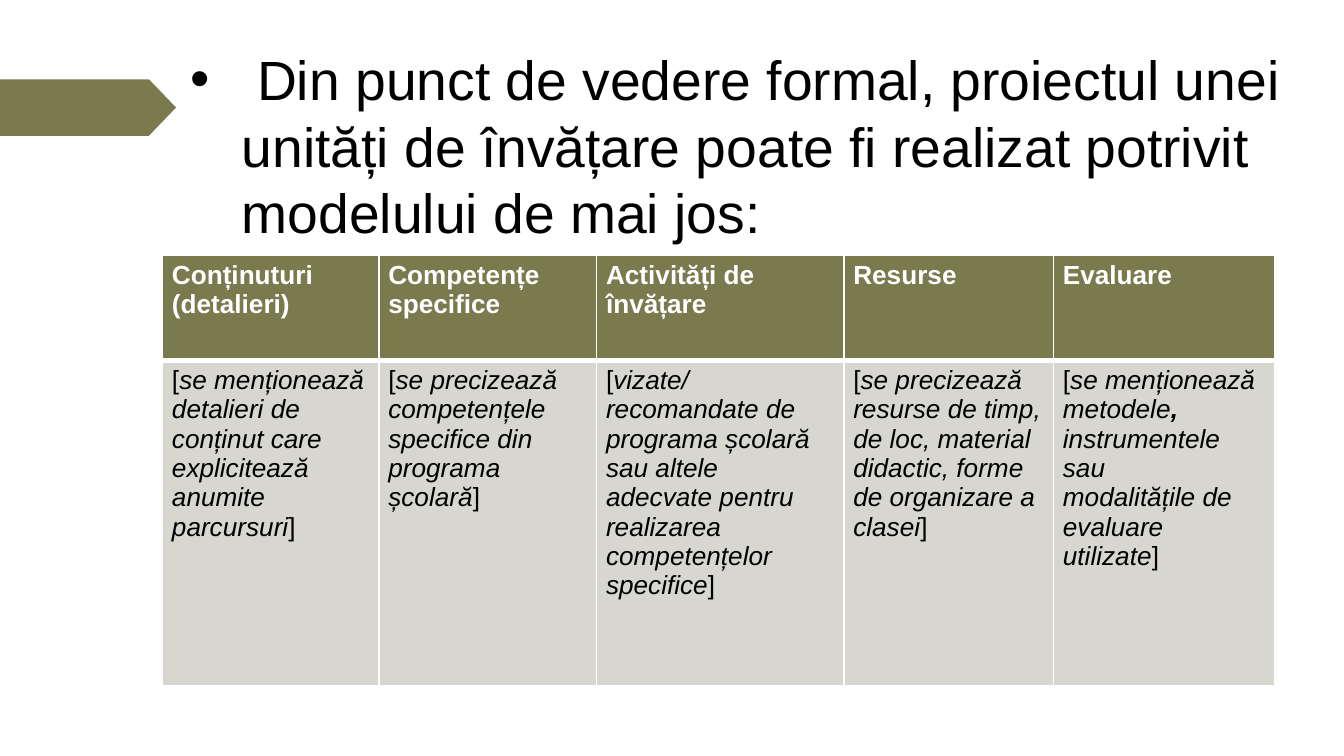
from lxml.etree import SubElement
from pptx import Presentation
from pptx.dml.color import RGBColor
from pptx.enum.shapes import MSO_SHAPE
from pptx.oxml.ns import qn
from pptx.util import Inches, Pt

FONT = "Arial"
OLIVE, PALE, WHITE, BLACK = "797B4F", "D7D7D0", "FFFFFF", "000000"
TITLE = ("Din punct de vedere formal, proiectul unei unități de învățare "
         "poate fi realizat potrivit modelului de mai jos:")
COLUMN_WIDTHS = [1.61, 1.62, 1.84, 1.56, 1.65]
ROW_HEIGHTS = [0.78, 2.42]
HEADERS = [
    ["Conținuturi", "(detalieri)"],
    ["Competențe specifice"],
    ["Activități de învățare"],
    ["Resurse"],
    ["Evaluare"],
]
DETAILS = [
    ["se menționează detalieri de conținut care explicitează anumite parcursuri"],
    ["se precizează", "competențele", "specifice din", "programa", "școlară"],
    ["vizate/", "recomandate de", "programa școlară", "sau altele",
     "adecvate pentru", "realizarea", "competențelor", "specifice"],
    ["se precizează resurse de timp, de loc, material didactic, "
     "forme de organizare a clasei"],
    ["se menționează metodele*,*", "instrumentele", "sau",
     "modalitățile de", "evaluare", "utilizate"],
]


def color(value):
    """Return the colour for a hex string."""
    return RGBColor.from_string(value)


def add_run(paragraph, text, size, fill, bold=False, italic=False):
    """Append one formatted run to a paragraph."""
    run = paragraph.add_run()
    run.text = text
    font = run.font
    font.name, font.size, font.bold, font.italic = FONT, Pt(size), bold, italic
    font.color.rgb = color(fill)


def add_arrow(slide, left, top, width, height):
    """Place the olive marker that points at the title."""
    arrow = slide.shapes.add_shape(
        MSO_SHAPE.PENTAGON, Inches(left), Inches(top), Inches(width), Inches(height))
    arrow.adjustments[0] = 0.48
    arrow.shadow.inherit = False
    arrow.fill.solid()
    arrow.fill.fore_color.rgb = color(OLIVE)
    arrow.line.fill.background()


def add_title(slide, left, top, width, height):
    """Place the bulleted introduction with a hanging indent."""
    frame = slide.shapes.add_textbox(
        Inches(left), Inches(top), Inches(width), Inches(height)).text_frame
    frame.word_wrap = True
    paragraph = frame.paragraphs[0]
    properties = paragraph._p.get_or_add_pPr()
    properties.set("marL", str(Inches(0.38)))
    properties.set("indent", str(-Inches(0.38)))
    SubElement(properties, qn("a:buFont"), typeface=FONT)
    SubElement(properties, qn("a:buChar"), char="•")
    add_run(paragraph, " ", 29.6, BLACK, bold=True)
    add_run(paragraph, TITLE, 29.6, BLACK)


def style_cell(cell, fill, top_width, bottom_width):
    """Set the margins, white borders and fill of a cell."""
    cell.margin_left = cell.margin_right = Inches(0.07)
    cell.margin_top = cell.margin_bottom = Inches(0.04)
    properties = cell._tc.get_or_add_tcPr()
    for side, width in zip("LRTB", (1, 1, top_width, bottom_width)):
        line = SubElement(properties, qn(f"a:ln{side}"), w=str(Pt(width)))
        SubElement(SubElement(line, qn("a:solidFill")), qn("a:srgbClr"), val=WHITE)
    cell.fill.solid()
    cell.fill.fore_color.rgb = color(fill)


def cell_paragraphs(cell, lines):
    """Yield a paragraph of the cell with each line."""
    frame = cell.text_frame
    for index, line in enumerate(lines):
        yield (frame.add_paragraph() if index else frame.paragraphs[0]), line


def fill_header(cell, lines):
    """Write a bold white column heading."""
    style_cell(cell, OLIVE, 1, 3)
    for paragraph, line in cell_paragraphs(cell, lines):
        add_run(paragraph, line, 14, WHITE, bold=True)


def fill_detail(cell, lines):
    """Write italic lines in upright brackets, with starred parts in bold."""
    style_cell(cell, PALE, 3, 1)
    add_run(cell.text_frame.paragraphs[0], "[", 14, BLACK)
    for paragraph, line in cell_paragraphs(cell, lines):
        for index, part in enumerate(line.split("*")):
            if part:
                add_run(paragraph, part, 14, BLACK, bold=index % 2 == 1, italic=True)
    add_run(paragraph, "]", 14, BLACK)


def add_plan_table(slide, left, top, width, height):
    """Place the learning unit table."""
    table = slide.shapes.add_table(
        len(ROW_HEIGHTS), len(COLUMN_WIDTHS),
        Inches(left), Inches(top), Inches(width), Inches(height)).table
    for column, share in zip(table.columns, COLUMN_WIDTHS):
        column.width = Inches(width * share / sum(COLUMN_WIDTHS))
    for row, share in zip(table.rows, ROW_HEIGHTS):
        row.height = Inches(height * share / sum(ROW_HEIGHTS))
    for index, (header, detail) in enumerate(zip(HEADERS, DETAILS)):
        fill_header(table.cell(0, index), header)
        fill_detail(table.cell(1, index), detail)


def main():
    """Build and save the slide."""
    presentation = Presentation()
    presentation.slide_width = Inches(10)
    presentation.slide_height = Inches(10 * 9 / 16)
    slide = presentation.slides.add_slide(presentation.slide_layouts[6])
    add_arrow(slide, 0, 0.59, 1.31, 0.42)
    add_title(slide, 1.32, 0.29, 8.48, 1.44)
    add_plan_table(slide, 1.21, 1.9, 8.28, 3.2)
    presentation.save("out.pptx")


if __name__ == "__main__":
    main()
